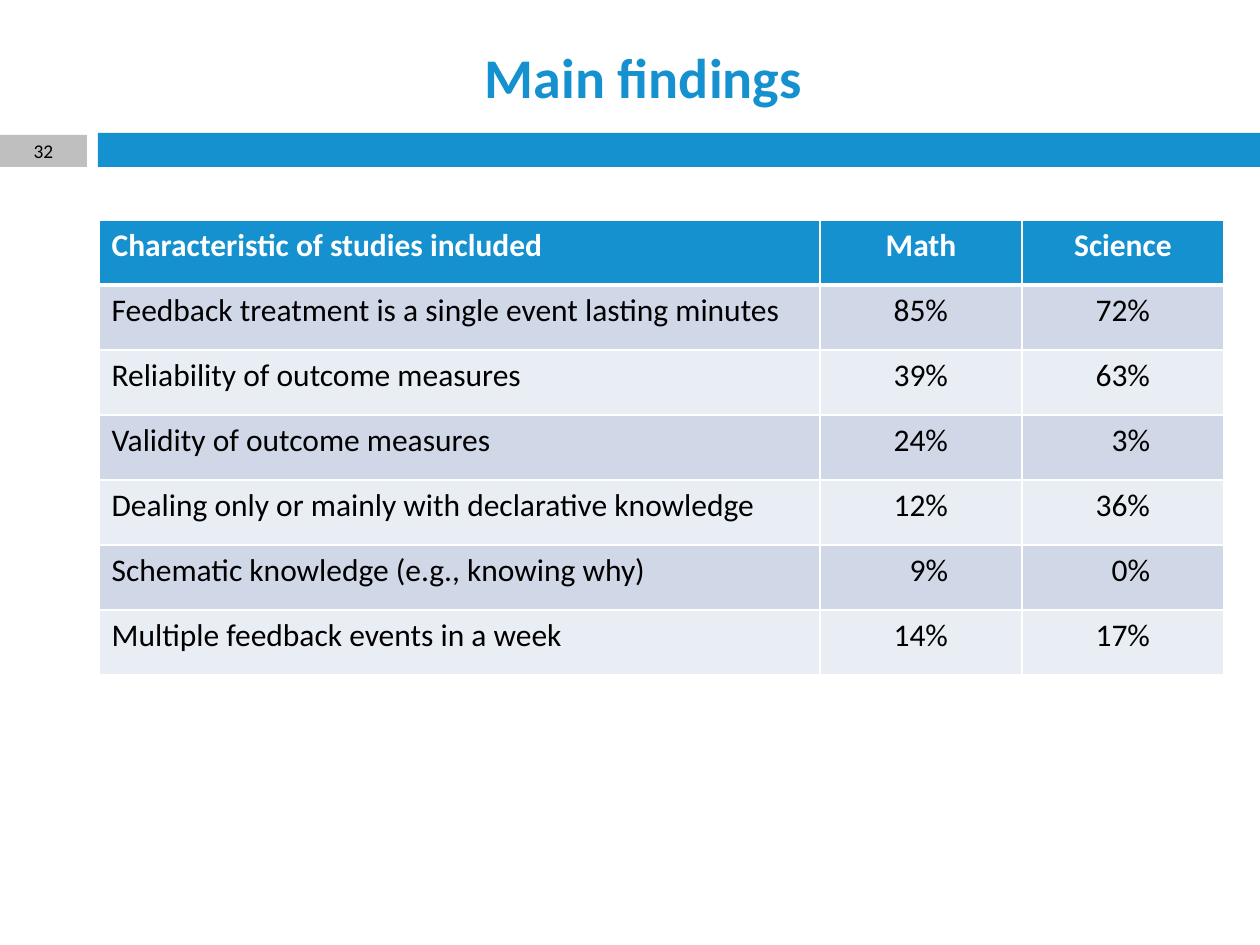
from dataclasses import dataclass

from lxml.etree import SubElement
from pptx import Presentation
from pptx.dml.color import RGBColor
from pptx.enum.shapes import MSO_SHAPE as Shape
from pptx.enum.text import MSO_ANCHOR as Anchor, PP_ALIGN as Align
from pptx.oxml.ns import qn
from pptx.util import Emu, Pt

EMU_PER_PX = 914400 / 126
BLUE, GREY, WHITE, BLACK = "1691D0", "BFBFBF", "FFFFFF", "000000"
BANDS = ("D0D8E8", "E9EDF4")


@dataclass(frozen=True)
class Box:
    left: int
    top: int
    width: int
    height: int


@dataclass(frozen=True)
class Finding:
    characteristic: str
    math: str
    science: str


TITLE = Box(98, 33, 1091, 86)
BAR = Box(98, 133, 1162, 34)
NUMBER = Box(0, 135, 87, 32)
COLUMN_WIDTHS = (721, 202, 202)
ROW_HEIGHT = 65
PERCENT_INSET = 74

HEADER = Finding("Characteristic of studies included", "Math", "Science")
FINDINGS = (
    Finding("Feedback treatment is a single event lasting minutes", "85%", "72%"),
    Finding("Reliability of outcome measures", "39%", "63%"),
    Finding("Validity of outcome measures", "24%", "3%"),
    Finding("Dealing only or mainly with declarative knowledge", "12%", "36%"),
    Finding("Schematic knowledge (e.g., knowing why)", "9%", "0%"),
    Finding("Multiple feedback events in a week", "14%", "17%"),
)


def px(value: int) -> Emu:
    return Emu(round(value * EMU_PER_PX))


def place(box: Box) -> tuple:
    return px(box.left), px(box.top), px(box.width), px(box.height)


def paint(fill, color: str) -> None:
    fill.solid()
    fill.fore_color.rgb = RGBColor.from_string(color)


def write(frame, text: str, size: float, color: str, align: Align, bold: bool = False) -> None:
    frame.text = text
    paragraph = frame.paragraphs[0]
    paragraph.alignment = align
    font_format = {"name": "Calibri", "size": Pt(size), "bold": bold}
    for name, value in font_format.items():
        setattr(paragraph.font, name, value)
    paragraph.font.color.rgb = RGBColor.from_string(color)


def add_rectangle(slide, box: Box, color: str):
    shape = slide.shapes.add_shape(Shape.RECTANGLE, *place(box))
    shape.shadow.inherit = False
    paint(shape.fill, color)
    shape.line.fill.background()
    return shape


def set_borders(cell, top: int, bottom: int) -> None:
    """Draw white cell borders; widths are in points, and the sides are 1 point."""
    properties = cell._tc.get_or_add_tcPr()
    for side, width in {"L": 1, "R": 1, "T": top, "B": bottom}.items():
        line = SubElement(properties, qn(f"a:ln{side}"), w=str(Pt(width)))
        SubElement(SubElement(line, qn("a:solidFill")), qn("a:srgbClr"), val=WHITE)


def fill_cell(cell, text: str, row: int, column: int) -> None:
    is_header = row == 0
    set_borders(cell, top=3 if row == 1 else 1, bottom=3 if is_header else 1)
    paint(cell.fill, BLUE if is_header else BANDS[(row - 1) % 2])
    if column == 0:
        align = Align.LEFT
    elif is_header:
        align = Align.CENTER
    else:
        align = Align.RIGHT
        cell.margin_right = px(PERCENT_INSET)
    write(cell.text_frame, text, 18, WHITE if is_header else BLACK, align, is_header)


def add_findings_table(slide, left: int, top: int) -> None:
    rows = (HEADER, *FINDINGS)
    box = Box(left, top, sum(COLUMN_WIDTHS), ROW_HEIGHT * len(rows))
    table = slide.shapes.add_table(len(rows), len(COLUMN_WIDTHS), *place(box)).table
    for column, width in zip(table.columns, COLUMN_WIDTHS):
        column.width = px(width)
    for row, finding in enumerate(rows):
        table.rows[row].height = px(ROW_HEIGHT)
        texts = (finding.characteristic, finding.math, finding.science)
        for column, text in enumerate(texts):
            fill_cell(table.cell(row, column), text, row, column)


def add_title(slide, text: str) -> None:
    title = slide.shapes.title
    for name, value in zip(("left", "top", "width", "height"), place(TITLE)):
        setattr(title, name, value)
    title.text_frame.vertical_anchor = Anchor.MIDDLE
    write(title.text_frame, text, 32, BLUE, Align.CENTER, bold=True)


def add_slide_number(slide, number: str) -> None:
    frame = add_rectangle(slide, NUMBER, GREY).text_frame
    frame_format = {"vertical_anchor": Anchor.MIDDLE, "margin_top": 0, "margin_bottom": 0}
    for name, value in frame_format.items():
        setattr(frame, name, value)
    write(frame, number, 11.1, BLACK, Align.CENTER)


def main() -> None:
    presentation = Presentation()
    presentation.slide_width = px(1260)
    presentation.slide_height = px(945)
    slide = presentation.slides.add_slide(presentation.slide_layouts[5])
    add_title(slide, "Main findings")
    add_rectangle(slide, BAR, BLUE)
    add_slide_number(slide, "32")
    add_findings_table(slide, left=99, top=220)
    presentation.save("out.pptx")


if __name__ == "__main__":
    main()
